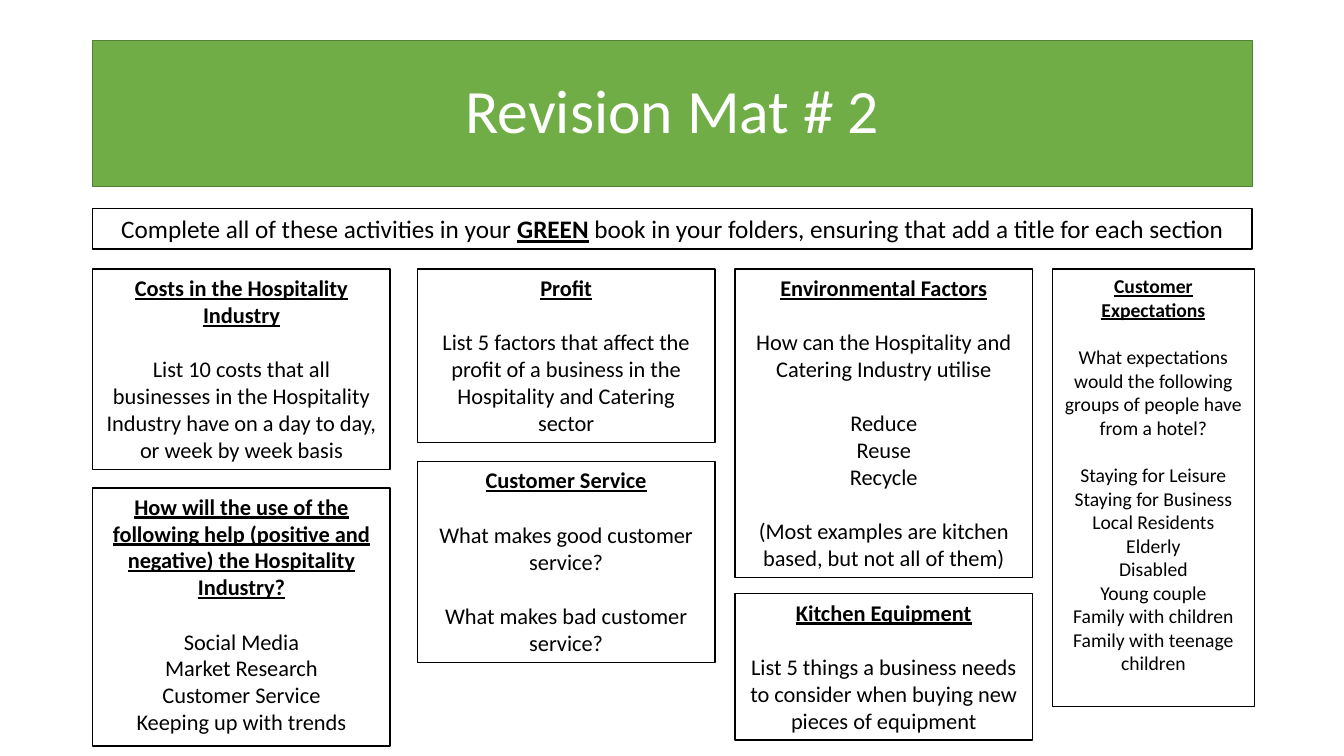
from pptx import Presentation
from pptx.dml.color import RGBColor
from pptx.enum.text import MSO_ANCHOR, MSO_AUTO_SIZE, PP_ALIGN
from pptx.util import Inches, Pt

FONT = "Calibri"
COLORS = {
    "banner": "70AD47",
    "banner_line": "538035",
    "white": "FFFFFF",
    "black": "000000",
}
LEFT, WIDTH = 0.92, 11.5
CARD_WIDTH = 2.95
CARD_TOP = 2.67
LINE_HEIGHT = 1.22

# Each card: left, top, width, height, text size, heading, groups of lines
CARDS = [
    (LEFT, CARD_TOP, CARD_WIDTH, 1.99, 16, "Costs in the Hospitality Industry", [
        ["List 10 costs that all businesses in the Hospitality Industry "
         "have on a day to day, or week by week basis"],
    ]),
    (LEFT, 4.84, CARD_WIDTH, 2.56, 16,
     "How will the use of the following help (positive and negative) "
     "the Hospitality Industry?", [
         ["Social Media", "Market Research", "Customer Service",
          "Keeping up with trends"],
     ]),
    (4.14, CARD_TOP, CARD_WIDTH, 1.72, 16, "Profit", [
        ["List 5 factors that affect the profit of a business in the "
         "Hospitality and Catering sector"],
    ]),
    (4.14, 4.58, CARD_WIDTH, 1.99, 16, "Customer Service", [
        ["What makes good customer service?"],
        ["What makes bad customer service?"],
    ]),
    (7.29, CARD_TOP, CARD_WIDTH, 3.06, 16, "Environmental Factors", [
        ["How can the Hospitality and Catering Industry utilise"],
        ["Reduce", "Reuse", "Recycle"],
        ["(Most examples are kitchen based, but not all of them)"],
    ]),
    (7.29, 5.89, CARD_WIDTH, 1.45, 16, "Kitchen Equipment", [
        ["List 5 things a business needs to consider when buying new "
         "pieces of equipment"],
    ]),
    (10.44, CARD_TOP, 2, 4.34, 14, "Customer Expectations", [
        ["What expectations would the following groups of people have "
         "from a hotel?"],
        ["Staying for Leisure", "Staying for Business", "Local Residents",
         "Elderly", "Disabled", "Young couple", "Family with children",
         "Family with teenage children"],
    ]),
]


def color(name):
    return RGBColor.from_string(COLORS[name])


def paint(shape, fill, line):
    shape.fill.solid()
    shape.fill.fore_color.rgb = color(fill)
    shape.line.color.rgb = color(line)
    shape.line.width = Pt(1)


def style(font, size, color_name="black", strong=False):
    font.name = FONT
    font.size = Pt(size)
    font.color.rgb = color(color_name)
    font.bold = strong
    font.underline = strong


def add_box(slide, left, top, width, height):
    """Add a white, black-edged text box and return its text frame."""
    box = slide.shapes.add_textbox(
        Inches(left), Inches(top), Inches(width), Inches(height))
    paint(box, "white", "black")
    box.text_frame.word_wrap = True
    box.text_frame.auto_size = MSO_AUTO_SIZE.NONE
    return box.text_frame


def set_title(slide):
    title = slide.shapes.title
    title.left, title.top = Inches(LEFT), Inches(0.4)
    title.width, title.height = Inches(WIDTH), Inches(1.45)
    paint(title, "banner", "banner_line")
    title.text_frame.text = "Revision Mat # 2"
    title.text_frame.vertical_anchor = MSO_ANCHOR.MIDDLE
    paragraph = title.text_frame.paragraphs[0]
    paragraph.alignment = PP_ALIGN.CENTER
    paragraph.line_spacing = 0.9
    style(paragraph.runs[0].font, 44, "white")


def add_instruction(slide):
    paragraph = add_box(slide, LEFT, 2.07, WIDTH, 0.4).paragraphs[0]
    paragraph.alignment = PP_ALIGN.CENTER
    for text, strong in [
        ("Complete all of these activities in your ", False),
        ("GREEN", True),
        (" book in your folders, ensuring that add a title for each section",
         False),
    ]:
        run = paragraph.add_run()
        run.text = text
        style(run.font, 18, strong=strong)


def add_card(slide, left, top, width, height, size, heading, groups):
    text_frame = add_box(slide, left, top, width, height)
    lines = [heading] + [line for group in groups for line in group]
    text_frame.text = "\n".join(lines)
    for index, paragraph in enumerate(text_frame.paragraphs):
        paragraph.alignment = PP_ALIGN.CENTER
        style(paragraph.runs[0].font, size, strong=index == 0)

    # One line of space above each group
    start = 1
    for group in groups:
        text_frame.paragraphs[start].space_before = Pt(size * LINE_HEIGHT)
        start += len(group)


def main():
    presentation = Presentation()
    presentation.slide_width = Inches(13.33)
    presentation.slide_height = Inches(7.5)
    slide = presentation.slides.add_slide(presentation.slide_layouts[5])

    # Banner and instruction
    set_title(slide)
    add_instruction(slide)

    # Activity cards
    for card in CARDS:
        add_card(slide, *card)

    presentation.save("out.pptx")


if __name__ == "__main__":
    main()
